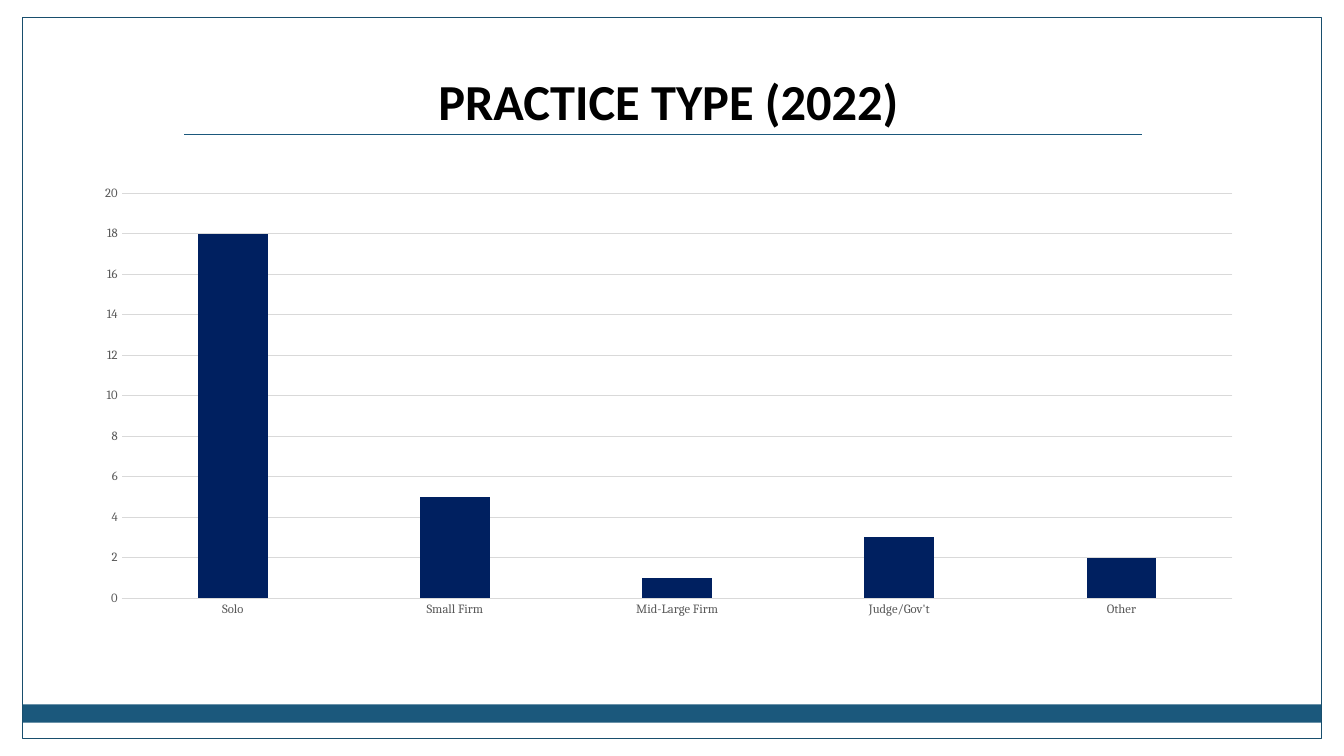
from dataclasses import dataclass

from lxml import etree
from pptx import Presentation
from pptx.chart.data import CategoryChartData
from pptx.dml.color import RGBColor
from pptx.enum.chart import XL_CHART_TYPE as ChartType, XL_TICK_MARK as TickMark
from pptx.enum.shapes import MSO_CONNECTOR as Connector, MSO_SHAPE as Shape
from pptx.enum.text import MSO_ANCHOR as Anchor, PP_ALIGN as Align
from pptx.oxml import parse_xml
from pptx.oxml.ns import nsdecls, qn
from pptx.util import Cm, Pt


@dataclass(frozen=True)
class Theme:
    paper: RGBColor = RGBColor.from_string("FFFFFF")
    accent: RGBColor = RGBColor.from_string("1B587C")
    frame: RGBColor = RGBColor.from_string("184E6D")
    ink: RGBColor = RGBColor.from_string("000000")
    label: RGBColor = RGBColor.from_string("595959")
    grid: RGBColor = RGBColor.from_string("D9D9D9")
    bar: RGBColor = RGBColor.from_string("002060")
    title_font: str = "Calibri"
    chart_font: str = "Cambria"
    title_size: Pt = Pt(36)
    chart_size: Pt = Pt(10)
    label_size: Pt = Pt(9)
    hairline: Pt = Pt(0.75)


THEME = Theme()
SLIDE_WIDTH, SLIDE_HEIGHT = Cm(33.87), Cm(19.05)
PRACTICES = {"Solo": 18, "Small Firm": 5, "Mid-Large Firm": 1, "Judge/Gov't": 3, "Other": 2}
PLOT_AREA = {"x": 0.042, "y": 0.017, "w": 0.951, "h": 0.804}


def style_line(line, color):
    line.color.rgb = color
    line.width = THEME.hairline


def add_rectangle(slide, left, top, width, height, fill=None, outline=None):
    shape = slide.shapes.add_shape(Shape.RECTANGLE, left, top, width, height)
    shape.shadow.inherit = False
    if fill is None:
        shape.fill.background()
    else:
        shape.fill.solid()
        shape.fill.fore_color.rgb = fill
    if outline is None:
        shape.line.fill.background()
    else:
        style_line(shape.line, outline)


def add_border(slide, left, top, width, height):
    """Draw the side margins, the bottom band and the thin frame."""
    for margin_left in (0, left + width):
        add_rectangle(slide, margin_left, 0, left, SLIDE_HEIGHT, fill=THEME.paper)
    band_height = Cm(0.46)
    band_top = top + height - band_height - Cm(0.41)
    add_rectangle(slide, left, band_top, width, band_height, fill=THEME.accent)
    add_rectangle(slide, left, top, width, height, outline=THEME.frame)


def add_title(slide, text, left, top, width, height):
    """Place a centred title with a rule beneath it."""
    frame = slide.shapes.add_textbox(left, top, width, height).text_frame
    frame.word_wrap = True
    frame.vertical_anchor = Anchor.BOTTOM
    frame.margin_bottom = 0
    paragraph = frame.paragraphs[0]
    paragraph.text = text
    paragraph.alignment = Align.CENTER
    font = paragraph.font
    font.name, font.size, font.bold = THEME.title_font, THEME.title_size, True
    font.color.rgb = THEME.ink

    rule_top = top + height + Cm(0.1)
    rule = slide.shapes.add_connector(
        Connector.STRAIGHT, left + Cm(2.18), rule_top, left + width - Cm(2.46), rule_top)
    style_line(rule.line, THEME.accent)
    etree.SubElement(rule._element.spPr, qn("a:effectLst"))


def set_plot_area(chart):
    """Fix the inner plot area as fractions of the chart."""
    plot_area = chart._chartSpace.chart.plotArea
    for layout in plot_area.findall(qn("c:layout")):
        plot_area.remove(layout)
    modes = '<c:xMode val="edge"/><c:yMode val="edge"/>'
    sizes = "".join(f'<c:{key} val="{value}"/>' for key, value in PLOT_AREA.items())
    plot_area.insert(0, parse_xml(
        f'<c:layout {nsdecls("c")}><c:manualLayout><c:layoutTarget val="inner"/>'
        f"{modes}{sizes}</c:manualLayout></c:layout>"))


def style_axes(chart):
    for axis in (chart.category_axis, chart.value_axis):
        axis.major_tick_mark = axis.minor_tick_mark = TickMark.NONE
        font = axis.tick_labels.font
        font.name, font.size = THEME.chart_font, THEME.label_size
        font.color.rgb = THEME.label
    style_line(chart.category_axis.format.line, THEME.grid)
    values = chart.value_axis
    values.minimum_scale, values.maximum_scale, values.major_unit = 0, 20, 2
    values.format.line.fill.background()
    style_line(values.major_gridlines.format.line, THEME.grid)


def add_practice_chart(slide, left, top, width, height):
    data = CategoryChartData()
    data.categories = list(PRACTICES)
    data.add_series("Series 1", list(PRACTICES.values()))
    chart = slide.shapes.add_chart(
        ChartType.COLUMN_CLUSTERED, left, top, width, height, data).chart
    chart.has_legend = chart.has_title = False
    chart.font.name, chart.font.size = THEME.chart_font, THEME.chart_size
    chart.font.color.rgb = THEME.ink
    plot = chart.plots[0]
    plot.vary_by_categories = False
    plot.gap_width, plot.overlap = 219, -27
    bar_fill = plot.series[0].format.fill
    bar_fill.solid()
    bar_fill.fore_color.rgb = THEME.bar
    style_axes(chart)
    set_plot_area(chart)


def main():
    presentation = Presentation()
    presentation.slide_width, presentation.slide_height = SLIDE_WIDTH, SLIDE_HEIGHT
    slide = presentation.slides.add_slide(presentation.slide_layouts[6])
    add_border(slide, Cm(0.57), Cm(0.43), Cm(32.73), Cm(18.19))
    add_title(slide, "PRACTICE TYPE (2022)", Cm(2.46), Cm(0.94), Cm(28.78), Cm(2.34))
    add_practice_chart(slide, Cm(1.83), Cm(4.65), Cm(29.44), Cm(12.7))
    presentation.save("out.pptx")


if __name__ == "__main__":
    main()
